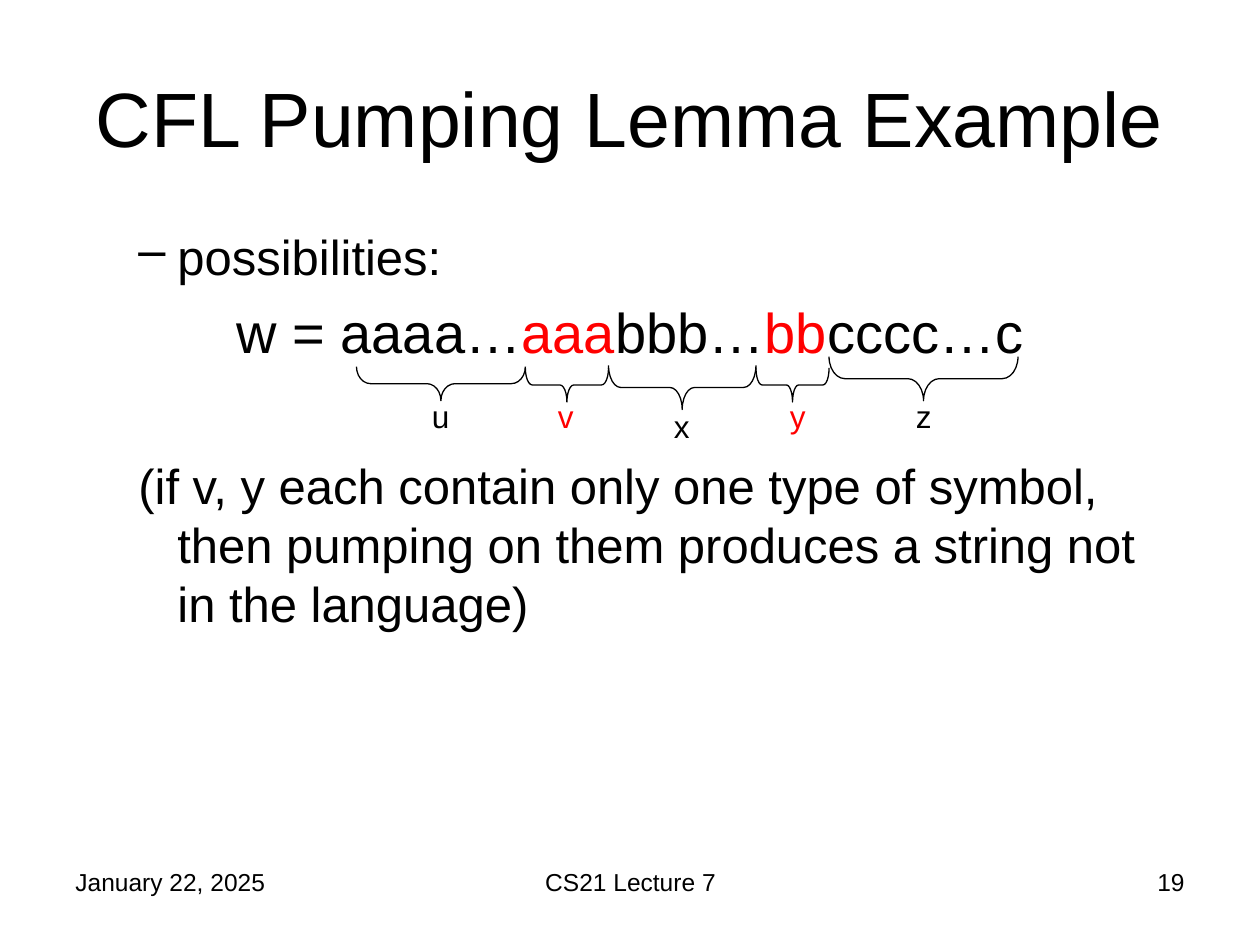
import itertools

import pptx
import pptx.dml.color
import pptx.enum.shapes
import pptx.enum.text
import pptx.oxml
import pptx.oxml.ns
import pptx.util

Inches, Pt = pptx.util.Inches, pptx.util.Pt
ALIGN = pptx.enum.text.PP_ALIGN
ANCHOR = pptx.enum.text.MSO_ANCHOR

# Content
COLORS = {"text": "000000", "pumped": "FF0000"}
FONT = "Arial"
TITLE = "CFL Pumping Lemma Example"
FOOTERS = [  # text, left, width, alignment
    ("January 22, 2025", 0.5, 2.33, ALIGN.LEFT),
    ("CS21 Lecture 7", 3.42, 3.17, ALIGN.CENTER),
    ("19", 7.17, 2.33, ALIGN.RIGHT),
]
WORD = [("w = aaaa…", "text"), ("aaa", "pumped"), ("bbb…", "text"),
        ("bb", "pumped"), ("cccc…c", "text")]
BODY = [  # spans, size, alignment, left margin, hanging indent, space before, bullet
    ([("possibilities:", "text")], 28, ALIGN.LEFT, 0.81, 0.31, 5.6, "–"),
    (WORD, 32, ALIGN.CENTER, 0.38, 0.38, 7, None),
    ([("(if v, y each contain only one type of symbol, then pumping on them "
       "produces a string not in the language)", "text")],
     28, ALIGN.LEFT, 0.81, 0.31, 52, None),
]
BRACE_EDGES = [2.83, 4.17, 4.83, 6, 6.58, 8.08]
PARTS = [  # name, color, brace top, brace depth, label left, label top
    ("u", "text", 2.91, 0.27, 3.33, 3.1),
    ("v", "pumped", 2.92, 0.27, 4.33, 3.1),
    ("x", "text", 2.9, 0.35, 5.25, 3.18),
    ("y", "pumped", 2.92, 0.27, 6.17, 3.1),
    ("z", "text", 2.83, 0.35, 7.17, 3.1),
]


def rgb(name):
    return pptx.dml.color.RGBColor.from_string(COLORS[name])


def add_box(page, left, top, width, height, anchor=ANCHOR.TOP):
    frame = page.shapes.add_textbox(
        Inches(left), Inches(top), Inches(width), Inches(height)).text_frame
    frame.word_wrap = True
    frame.vertical_anchor = anchor
    return frame


def fill_para(para, spans, size, align=ALIGN.LEFT):
    para.alignment = align
    for text, color in spans:
        span = para.add_run()
        span.text = text
        span.font.name = FONT
        span.font.size = Pt(size)
        span.font.color.rgb = rgb(color)


def set_indent(para, margin, hanging, bullet):
    props = para._p.get_or_add_pPr()
    props.set("marL", str(Inches(margin)))
    props.set("indent", str(-Inches(hanging)))
    mark = pptx.oxml.parse_xml(
        f"<a:{'buChar' if bullet else 'buNone'} {pptx.oxml.ns.nsdecls('a')}/>")
    if bullet:
        mark.set("char", bullet)
    props.append(mark)


def add_brace(page, left, right, top, depth):
    length = right - left
    # The upright brace shares its centre with the turned one
    brace = page.shapes.add_shape(
        pptx.enum.shapes.MSO_SHAPE.LEFT_BRACE,
        Inches((left + right - depth) / 2), Inches(top + (depth - length) / 2),
        Inches(depth), Inches(length))
    brace.rotation = 270
    brace.adjustments[0] = length / depth / 12
    brace.shadow.inherit = False
    brace.fill.background()
    brace.line.color.rgb = rgb("text")
    brace.line.width = Pt(0.75)


def main():
    deck = pptx.Presentation()
    deck.slide_width, deck.slide_height = Inches(10), Inches(7.5)
    page = deck.slides.add_slide(deck.slide_layouts[6])

    # Footer and title
    for text, left, width, align in FOOTERS:
        frame = add_box(page, left, 6.83, width, 0.52)
        fill_para(frame.paragraphs[0], [(text, "text")], 14, align)
    frame = add_box(page, 0.5, 0.3, 9, 1.25, ANCHOR.MIDDLE)
    fill_para(frame.paragraphs[0], [(TITLE, "text")], 44, ALIGN.CENTER)

    # Body
    frame = add_box(page, 0.5, 1.75, 9, 4.95)
    for i, (spans, size, align, margin, hanging, before, bullet) in enumerate(BODY):
        para = frame.add_paragraph() if i else frame.paragraphs[0]
        fill_para(para, spans, size, align)
        para.space_before = Pt(before)
        set_indent(para, margin, hanging, bullet)

    # Braces and their labels
    for (left, right), part in zip(itertools.pairwise(BRACE_EDGES), PARTS):
        name, color, top, depth, label_left, label_top = part
        add_brace(page, left, right, top, depth)
        frame = add_box(page, label_left, label_top, 0.42, 0.4)
        fill_para(frame.paragraphs[0], [(name, color)], 18)

    deck.save("out.pptx")


if __name__ == "__main__":
    main()
